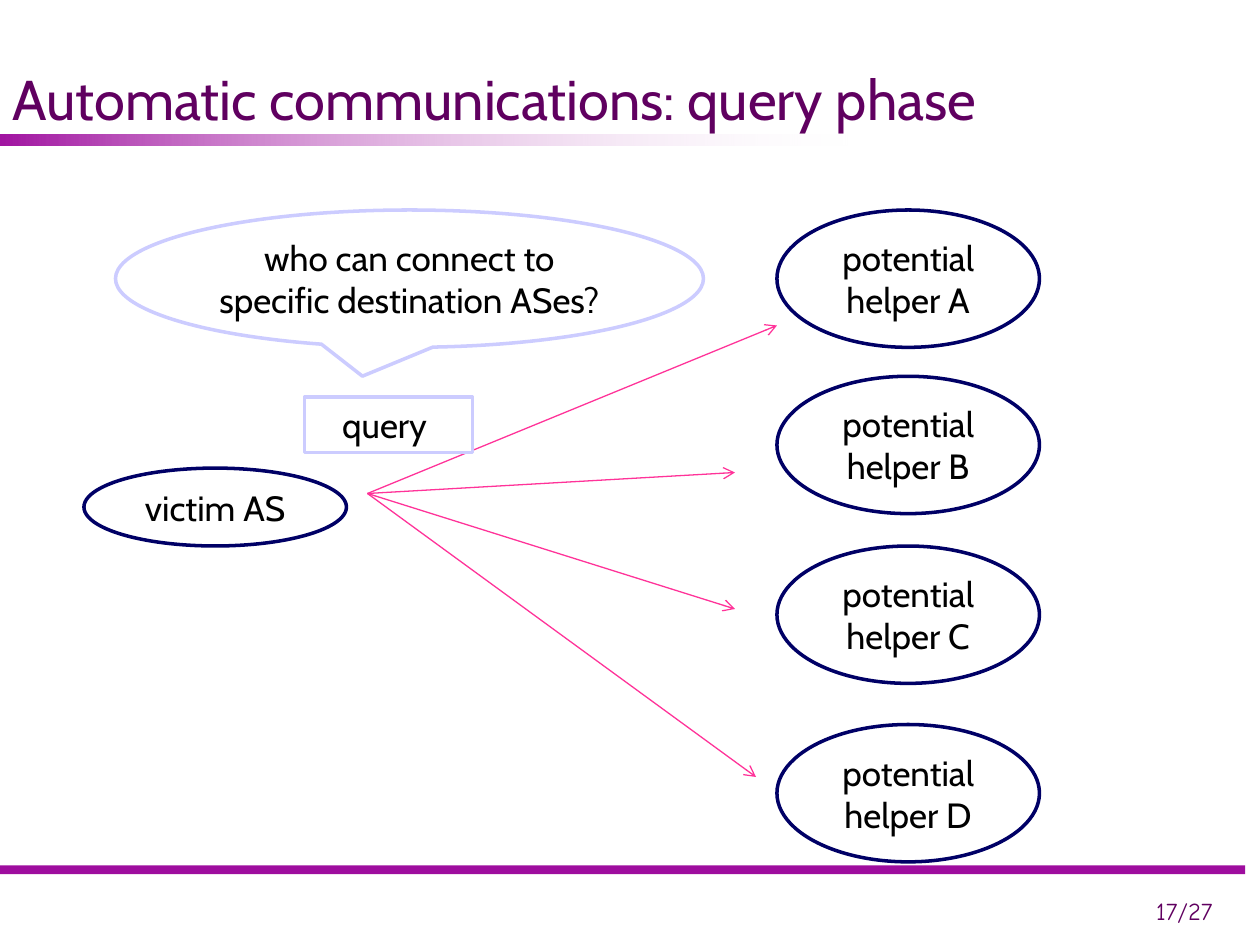
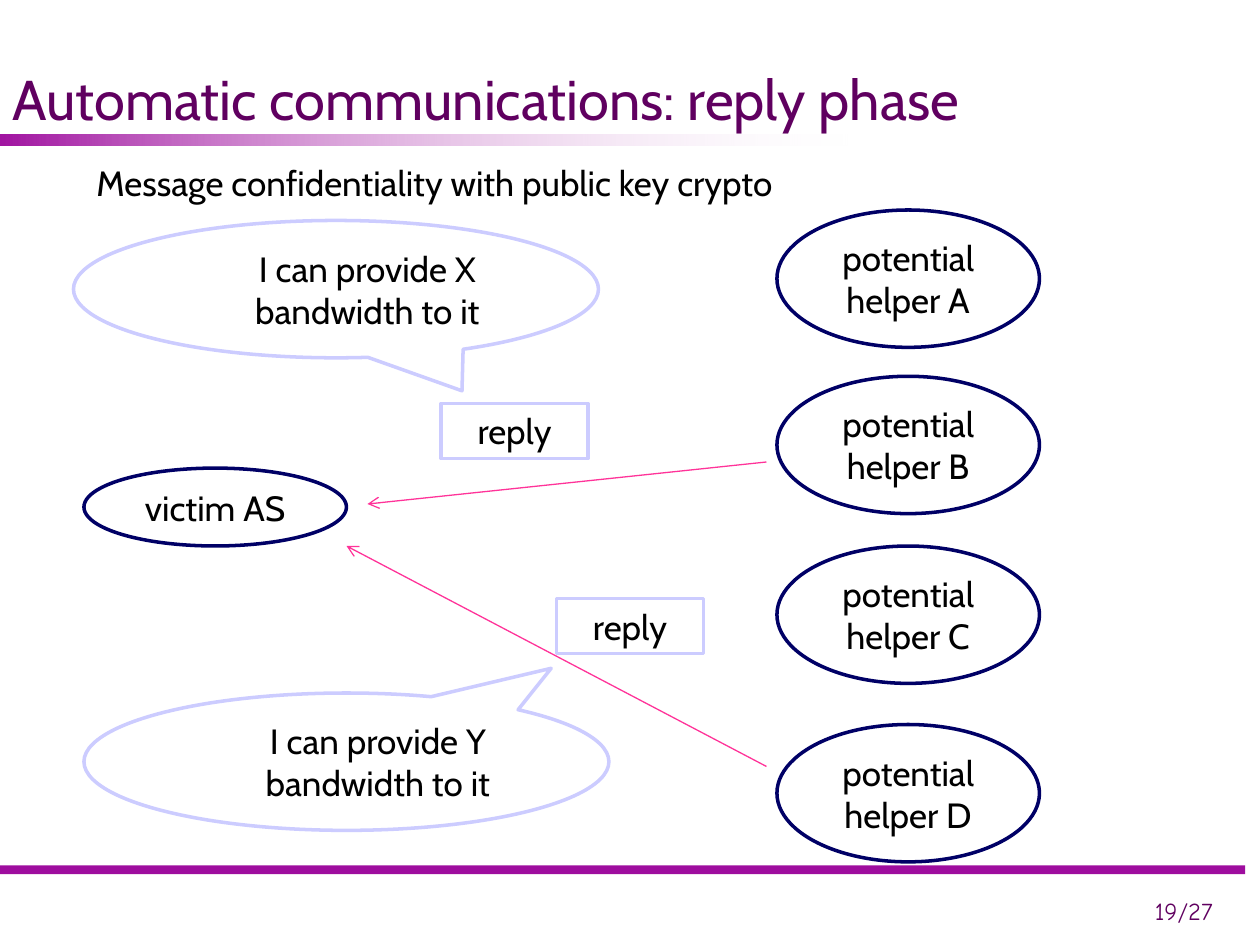
import dataclasses

import lxml.etree
import pptx
import pptx.dml.color
import pptx.enum.dml
import pptx.enum.shapes
import pptx.enum.text
import pptx.oxml.ns
import pptx.util

Pt = pptx.util.Pt
Preset = pptx.enum.shapes.MSO_SHAPE
Align = pptx.enum.text.PP_ALIGN
Anchor = pptx.enum.text.MSO_ANCHOR


@dataclasses.dataclass(frozen=True)
class Theme:
    band: str = "990099"
    heading: str = "600060"
    body: str = "000000"
    paper: str = "FFFFFF"
    node: str = "000066"
    message: str = "CCCCFF"
    arrow: str = "FF3399"
    body_font: str = "Cabin"
    number_font: str = "Comic Neue"
    title_size: float = 32
    body_size: float = 20
    number_size: float = 14
    outline_width: float = 2
    arrow_width: float = 0.75
    band_width: float = 5


THEME = Theme()
BODY_FORMAT = {"name": THEME.body_font, "size": Pt(THEME.body_size)}
TITLE_FORMAT = {"name": THEME.body_font, "size": Pt(THEME.title_size)}
NUMBER_FORMAT = {"name": THEME.number_font, "size": Pt(THEME.number_size)}

HELPER_TOPS = {"A": 120, "D": 414, "B": 215, "C": 312}
NODE_WIDTH = 150
BUBBLE_HEIGHT = 78.5
LABEL_HEIGHT = 31.5
LIST_INDENT = 36


def rgb(color):
    return pptx.dml.color.RGBColor.from_string(color)


def set_attributes(target, values):
    for name, value in values.items():
        setattr(target, name, value)


def add_xml(parent, tag, **attributes):
    return lxml.etree.SubElement(parent, pptx.oxml.ns.qn(tag), attributes)


def set_opacity(element, percentages):
    colors = element.iter(pptx.oxml.ns.qn("a:srgbClr"))
    for color, percent in zip(colors, percentages):
        add_xml(color, "a:alpha", val=str(percent * 1000))


def write_text(shape, text, font_format, color, align=Align.CENTER,
               anchor=Anchor.MIDDLE, indent=0):
    set_attributes(shape.text_frame, {
        "word_wrap": True,
        "vertical_anchor": anchor,
        "margin_left": Pt(7.2),
        "margin_right": Pt(7.2),
        "margin_top": Pt(3.6),
        "margin_bottom": Pt(3.6),
    })
    paragraph = shape.text_frame.paragraphs[0]
    paragraph.alignment = align
    if indent:
        properties = paragraph._p.get_or_add_pPr()
        properties.set("marL", str(Pt(indent)))
        properties.set("indent", "0")
    run = paragraph.add_run()
    run.text = text
    set_attributes(run.font, font_format)
    run.font.color.rgb = rgb(color)


def add_text(slide, box, text, font_format, color, **layout):
    shape = slide.shapes.add_textbox(*map(Pt, box))
    write_text(shape, text, font_format, color, **layout)


def add_outlined(slide, preset, box, text, outline, pointer=(), indent=0):
    shape = slide.shapes.add_shape(preset, *map(Pt, box))
    shape.shadow.inherit = False
    shape.fill.solid()
    shape.fill.fore_color.rgb = rgb(THEME.paper)
    shape.line.color.rgb = rgb(outline)
    shape.line.width = Pt(THEME.outline_width)
    for index, value in enumerate(pointer):
        shape.adjustments[index] = value
    write_text(shape, text, BODY_FORMAT, THEME.body, indent=indent)


def add_node(slide, left, top, height, text):
    add_outlined(slide, Preset.OVAL, (left, top, NODE_WIDTH, height), text, THEME.node)


def add_bubble(slide, left, top, width, text, pointer, indent=0):
    add_outlined(slide, Preset.OVAL_CALLOUT, (left, top, width, BUBBLE_HEIGHT),
                 text, THEME.message, pointer, indent)


def add_label(slide, left, top, width, text):
    add_outlined(slide, Preset.RECTANGLE, (left, top, width, LABEL_HEIGHT),
                 text, THEME.message)


def add_line(slide, start, end, color, width):
    connector = slide.shapes.add_connector(
        pptx.enum.shapes.MSO_CONNECTOR.STRAIGHT, *map(Pt, (*start, *end)))
    connector.line.color.rgb = rgb(color)
    connector.line.width = Pt(width)
    add_xml(connector._element.spPr, "a:effectLst")
    return connector


def add_arrow(slide, start, end):
    connector = add_line(slide, start, end, THEME.arrow, THEME.arrow_width)
    add_xml(connector.line._get_or_add_ln(), "a:tailEnd", type="arrow")


def add_title_band(slide):
    band = slide.shapes.add_shape(Preset.RECTANGLE, *map(Pt, (0, 77, 484.5, 6)))
    band.shadow.inherit = False
    band.line.fill.background()
    band.fill.gradient()
    band.fill.gradient_angle = 0
    for stop, color in zip(band.fill.gradient_stops, (THEME.band, THEME.paper)):
        stop.color.rgb = rgb(color)
    set_opacity(band._element.spPr, (92, 10))


def add_base_slide(presentation, title, number):
    slide = presentation.slides.add_slide(presentation.slide_layouts[6])
    footer = add_line(slide, (0, 497), (711.5, 497), THEME.band, THEME.band_width)
    set_opacity(footer._element.spPr, (94,))
    add_title_band(slide)
    add_text(slide, (620.5, 508.5, 79.5, 17.5), number, NUMBER_FORMAT, THEME.heading,
             align=Align.RIGHT, anchor=Anchor.TOP)
    add_text(slide, (0, 15, 720, 64), title, TITLE_FORMAT, THEME.heading,
             align=Align.LEFT, anchor=Anchor.BOTTOM)
    add_node(slide, 48, 267.5, 44.5, "victim AS")
    for letter, top in HELPER_TOPS.items():
        add_node(slide, 444, top, BUBBLE_HEIGHT, f"potential helper {letter}")
    return slide


def build_query_slide(presentation):
    slide = add_base_slide(presentation, "Automatic communications: query phase", "17/27")
    for end in ((444, 186), (420, 270), (420, 348), (432, 444)):
        add_arrow(slide, (210, 282), end)
    add_bubble(slide, 66, 120, 336, "who can connect to specific destination ASes?",
               (-0.08, 0.71))
    add_label(slide, 174, 227, 96, "query ")


def build_reply_slide(presentation):
    slide = add_base_slide(presentation, "Automatic communications: reply phase", "19/27")
    add_bubble(slide, 42, 126, 300, "I can provide X bandwidth to it",
               (0.24, 0.74), LIST_INDENT)
    add_arrow(slide, (438, 264), (210, 288))
    add_label(slide, 252, 230.5, 84, "reply")
    add_arrow(slide, (438, 438), (198, 312))
    add_label(slide, 318, 342, 84, "reply")
    add_bubble(slide, 48, 396, 300, "I can provide Y bandwidth to it",
               (0.39, -0.68), LIST_INDENT)
    add_text(slide, (12, 88.5, 454.5, LABEL_HEIGHT),
             "Message confidentiality with public key crypto", BODY_FORMAT, THEME.body,
             align=Align.LEFT, anchor=Anchor.TOP, indent=LIST_INDENT)


def main():
    presentation = pptx.Presentation()
    set_attributes(presentation, {"slide_width": Pt(720), "slide_height": Pt(540)})
    build_query_slide(presentation)
    build_reply_slide(presentation)
    presentation.save("out.pptx")


if __name__ == "__main__":
    main()
